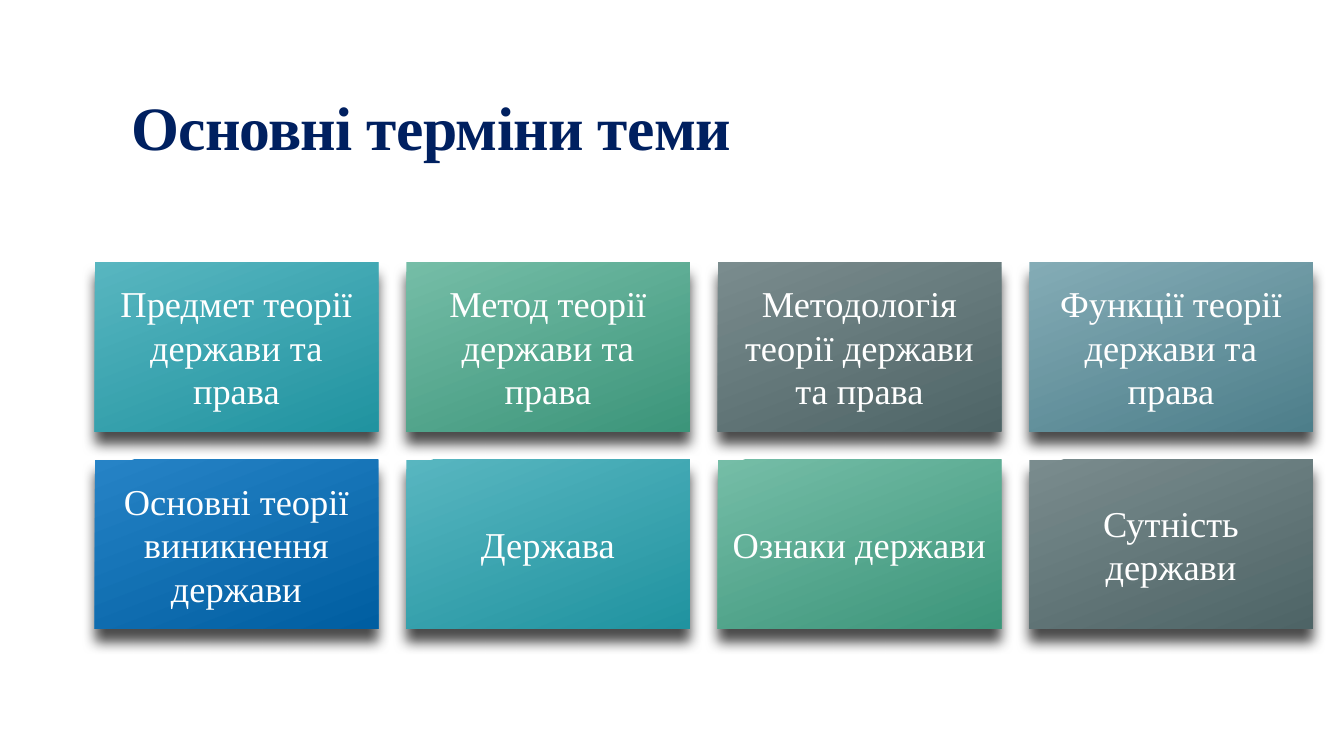
from lxml import etree
from pptx import Presentation
from pptx.dml.color import RGBColor
from pptx.enum.shapes import MSO_SHAPE as Shape
from pptx.enum.text import MSO_ANCHOR as Anchor, PP_ALIGN as Align
from pptx.oxml import parse_xml
from pptx.oxml.ns import nsdecls
from pptx.util import Pt

TITLE = "Основні терміни теми"
TERMS = [
    ("Предмет теорії держави та права", "teal"),
    ("Метод теорії держави та права", "green"),
    ("Методологія теорії держави та права", "gray"),
    ("Функції теорії держави та права", "steel"),
    ("Основні теорії виникнення держави", "blue"),
    ("Держава", "teal"),
    ("Ознаки держави", "green"),
    ("Сутність держави", "gray"),
]
FONT = "Times New Roman"
COLORS = {"title": "002060", "text": "FFFFFF", "shadow": "000000"}
FADES = {
    "teal": ("58B6C0", "2093A0"),
    "green": ("75BDA7", "3C957A"),
    "gray": ("7A8C8E", "4E6466"),
    "steel": ("84ACB6", "4D7E8A"),
    "blue": ("2683C6", "005EA1"),
}
PX = 9144  # 100 px to the inch
COLS = 4
LEFT, TOP, WIDE, HIGH = 94, 260, 281, 168
STEP_X, STEP_Y = 309, 196
INSET = 11


def px(*sizes):
    return [size * PX for size in sizes]


def style(run, size, color):
    run.font.name = FONT
    run.font.size = Pt(size)
    run.font.color.rgb = RGBColor.from_string(color)


def add_shadow(card):
    card.shadow.inherit = False
    effects = card._element.spPr.find("{*}effectLst")
    effects.append(parse_xml(
        f'<a:outerShdw {nsdecls("a")} blurRad="{Pt(9)}" dist="{Pt(9)}" '
        f'dir="5400000" rotWithShape="0"><a:srgbClr val="{COLORS["shadow"]}">'
        '<a:alpha val="70000"/></a:srgbClr></a:outerShdw>'))


def add_card(slide, index, term, fade):
    row, col = divmod(index, COLS)
    card = slide.shapes.add_shape(Shape.RECTANGLE, *px(
        LEFT + col * STEP_X, TOP + row * STEP_Y, WIDE, HIGH))
    card.line.fill.background()
    card.fill.gradient()
    card.fill.gradient_angle = 360 - 69
    for stop, color in zip(card.fill.gradient_stops, FADES[fade]):
        stop.color.rgb = RGBColor.from_string(color)
    add_shadow(card)
    frame = card.text_frame
    frame.text = term
    frame.word_wrap = True
    frame.vertical_anchor = Anchor.MIDDLE
    frame.margin_left = frame.margin_right = INSET * PX
    frame.margin_top = frame.margin_bottom = INSET * PX
    line = frame.paragraphs[0]
    line.alignment = Align.CENTER
    style(line.runs[0], 26, COLORS["text"])


def add_title(slide):
    title = slide.shapes.title
    title.left, title.top, title.width, title.height = px(120, 70, 1100, 97)
    frame = title.text_frame
    frame.text = TITLE
    frame.vertical_anchor = Anchor.BOTTOM
    line = frame.paragraphs[0]
    line.alignment = Align.LEFT
    line.line_spacing = 0.85
    run = line.runs[0]
    style(run, 44, COLORS["title"])
    run.font.bold = True
    run.font._element.set("spc", "-50")


def main():
    deck = Presentation()
    deck.slide_width, deck.slide_height = px(1333, 750)
    slide = deck.slides.add_slide(deck.slide_layouts[5])
    add_title(slide)
    for index, (term, fade) in enumerate(TERMS):
        add_card(slide, index, term, fade)
    deck.save("out.pptx")


if __name__ == "__main__":
    main()
